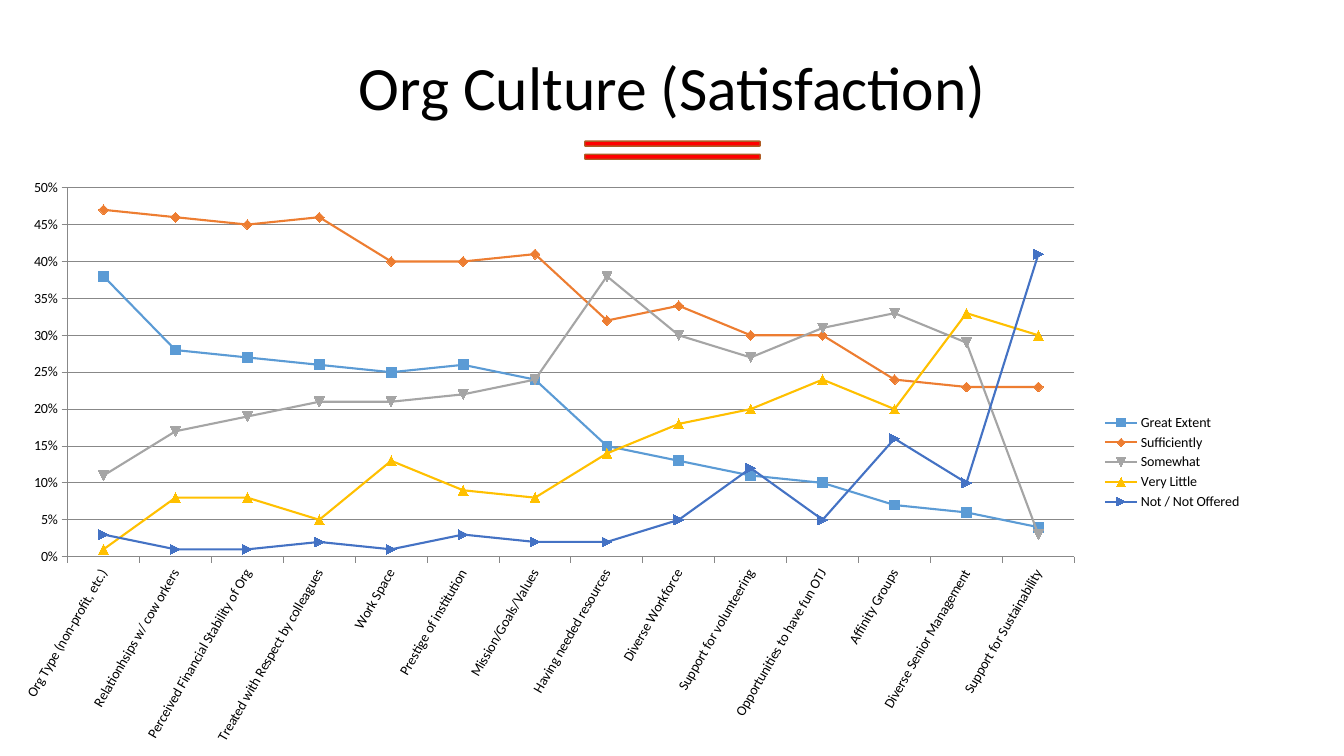
from pptx import Presentation
from pptx.chart.data import CategoryChartData
from pptx.dml.color import RGBColor
from pptx.enum.chart import XL_CHART_TYPE, XL_LEGEND_POSITION, XL_TICK_MARK
from pptx.enum.shapes import MSO_SHAPE
from pptx.enum.text import MSO_ANCHOR, PP_ALIGN
from pptx.oxml import parse_xml
from pptx.oxml.ns import nsdecls
from pptx.util import Inches, Pt

LINE_MARKERS = XL_CHART_TYPE.LINE_MARKERS
LEGEND_RIGHT = XL_LEGEND_POSITION.RIGHT
TICK_OUT = XL_TICK_MARK.OUTSIDE
ROUND_RECT = MSO_SHAPE.ROUNDED_RECTANGLE
MIDDLE = MSO_ANCHOR.MIDDLE
CENTER = PP_ALIGN.CENTER

BLACK = RGBColor(0x00, 0x00, 0x00)
RED = RGBColor(0xFF, 0x00, 0x00)
BROWN = RGBColor(0xAF, 0x5C, 0x24)
GRAY = RGBColor(0x88, 0x88, 0x88)
BLUE = RGBColor(0x5B, 0x9B, 0xD5)
ORANGE = RGBColor(0xED, 0x7D, 0x31)
SILVER = RGBColor(0xA5, 0xA5, 0xA5)
GOLD = RGBColor(0xFF, 0xC0, 0x00)
NAVY = RGBColor(0x44, 0x72, 0xC4)
FONT = "Calibri"

CATEGORIES = [
    "Org Type (non-profit, etc.)", "Relationhsips w/ cow orkers",
    "Perceived Financial Stability of Org", "Treated with Respect by colleagues",
    "Work Space", "Prestige of institution", "Mission/Goals/Values",
    "Having needed resources", "Diverse Workforce", "Support for volunteering",
    "Opportunities to have fun OTJ", "Affinity Groups",
    "Diverse Senior Management", "Support for Sustainability",
]
# Name, line colour, values in percent
SERIES = [
    ("Great Extent", BLUE, [38, 28, 27, 26, 25, 26, 24, 15, 13, 11, 10, 7, 6, 4]),
    ("Sufficiently", ORANGE, [47, 46, 45, 46, 40, 40, 41, 32, 34, 30, 30, 24, 23, 23]),
    ("Somewhat", SILVER, [11, 17, 19, 21, 21, 22, 24, 38, 30, 27, 31, 33, 29, 3]),
    ("Very Little", GOLD, [1, 8, 8, 5, 13, 9, 8, 14, 18, 20, 24, 20, 33, 30]),
    ("Not / Not Offered", NAVY, [3, 1, 1, 2, 1, 3, 2, 2, 5, 12, 5, 16, 10, 41]),
]


def set_font(font, size):
    for name, value in {"name": FONT, "size": Pt(size)}.items():
        setattr(font, name, value)
    font.color.rgb = BLACK


prs = Presentation()
prs.slide_width, prs.slide_height = Inches(13.33), Inches(7.5)
s = prs.slides.add_slide(prs.slide_layouts[6])

# Title
tf = s.shapes.add_textbox(Inches(0.92), Inches(0.4), Inches(11.5), Inches(1)).text_frame
tf.word_wrap = True
tf.vertical_anchor = MIDDLE
p = tf.paragraphs[0]
p.alignment = CENTER
p.line_spacing = 0.9
r = p.add_run()
r.text = "Org Culture (Satisfaction)"
set_font(r.font, 44)

# Double rule under the title
for top in (1.4, 1.53):
    sp = s.shapes.add_shape(ROUND_RECT, Inches(5.8), Inches(top), Inches(1.74), Inches(0.05))
    sp.shadow.inherit = False
    sp.fill.solid()
    sp.fill.fore_color.rgb = RED
    sp.line.color.rgb = BROWN
    sp.line.width = Pt(1)

# Line chart
data = CategoryChartData(number_format="0%")
data.categories = CATEGORIES
for name, color, percents in SERIES:
    data.add_series(name, [v / 100 for v in percents])
chart = s.shapes.add_chart(LINE_MARKERS, Inches(0), Inches(1.67),
                           Inches(12.42), Inches(5.83), data).chart
set_font(chart.font, 10)
chart.has_title = False
chart.has_legend = True
chart.legend.position = LEGEND_RIGHT
chart.legend.include_in_layout = False

for series, (name, color, percents) in zip(chart.plots[0].series, SERIES):
    series.smooth = False
    series.format.line.color.rgb = color
    series.format.line.width = Pt(1.5)
    series.marker.size = 7
    series.marker.format.fill.solid()
    series.marker.format.fill.fore_color.rgb = color
    series.marker.format.line.color.rgb = color

# Axes and gridlines
cat_axis, val_axis = chart.category_axis, chart.value_axis
val_axis.minimum_scale, val_axis.maximum_scale, val_axis.major_unit = 0, 0.5, 0.05
val_axis.tick_labels.number_format = "0%"
val_axis.tick_labels.number_format_is_linked = False
val_axis.has_major_gridlines = True
for axis in (cat_axis, val_axis):
    axis.major_tick_mark = TICK_OUT
    set_font(axis.tick_labels.font, 10)
for part in (cat_axis, val_axis, val_axis.major_gridlines):
    part.format.line.color.rgb = GRAY
    part.format.line.width = Pt(0.75)

# Slanted category labels, in 60000ths of a degree
body = cat_axis._element.xpath("c:txPr/a:bodyPr")[0]
body.set("rot", str(-60 * 60000))
body.set("vert", "horz")

# Fixed plot area, as fractions of the chart
plot_area = chart._chartSpace.xpath("c:chart/c:plotArea")[0]
for old in plot_area.xpath("c:layout"):
    plot_area.remove(old)
places = "".join(f'<c:{tag} val="{value}"/>' for tag, value in [
    ("layoutTarget", "inner"), ("xMode", "edge"), ("yMode", "edge"),
    ("x", 0.054), ("y", 0.033), ("w", 0.804), ("h", 0.628)])
plot_area.insert(0, parse_xml(
    f'<c:layout {nsdecls("c")}><c:manualLayout>{places}</c:manualLayout></c:layout>'))

prs.save("out.pptx")
